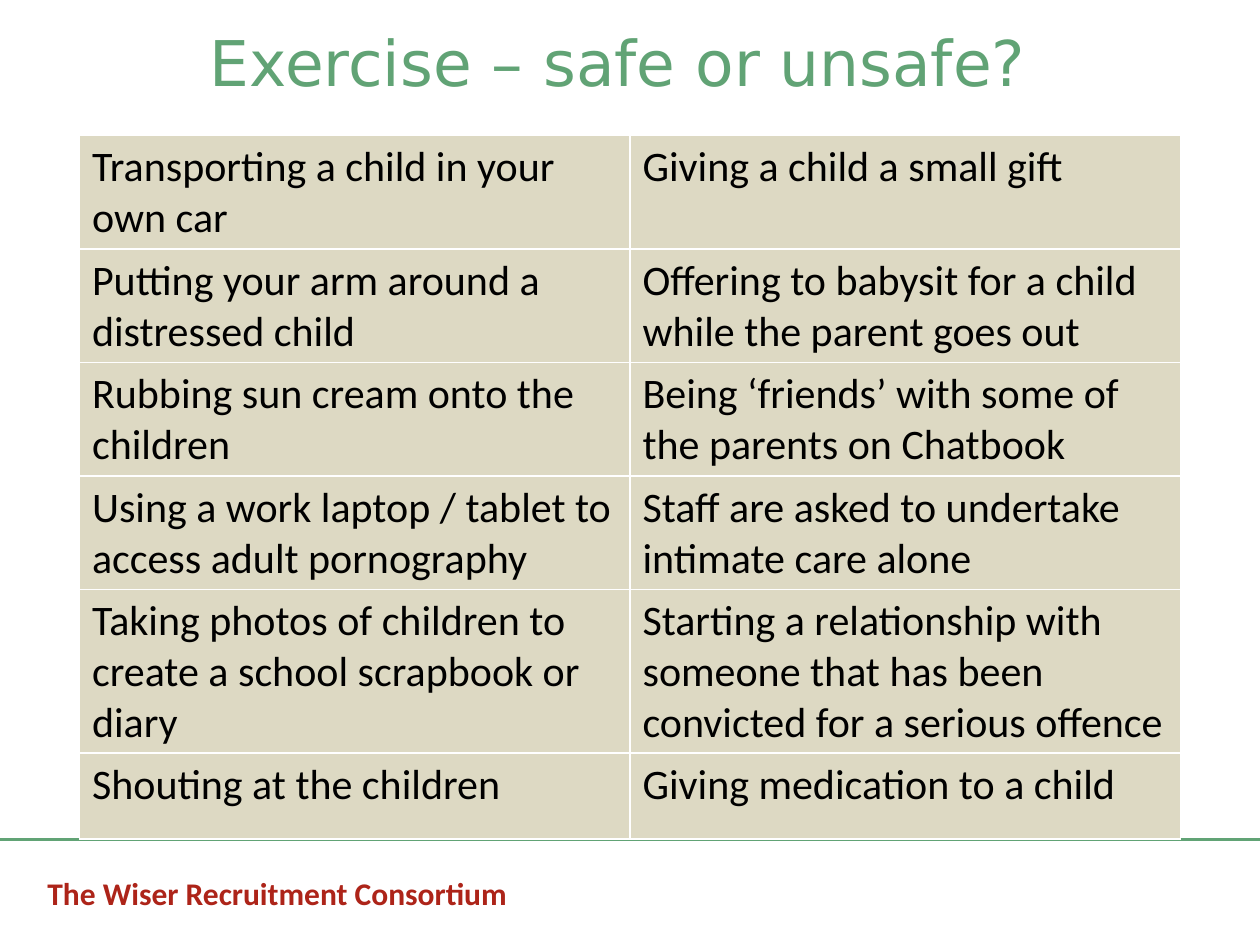
"""Build a slide with a table of safe or unsafe situations."""
from dataclasses import dataclass

from lxml.etree import SubElement
from pptx import Presentation
from pptx.dml.color import RGBColor as RGB
from pptx.enum.shapes import MSO_CONNECTOR as LINK
from pptx.enum.text import MSO_ANCHOR as ANCHOR, MSO_AUTO_SIZE as FIT, PP_ALIGN as ALIGN
from pptx.oxml import parse_xml
from pptx.oxml.ns import nsdecls, qn
from pptx.util import Pt


@dataclass(frozen=True)
class Theme:
    green: str = "61A375"
    red: str = "AD2419"
    sand: str = "DDD9C3"
    black: str = "000000"
    white: str = "FFFFFF"
    head: str = "DejaVu Sans"
    body: str = "Calibri"
    big: int = 36
    mid: int = 24
    small: int = 18


THEME = Theme()
WIDE, HIGH = 720, 540
CASES = [
    ("Transporting a child in your own car", "Giving a child a small gift"),
    ("Putting your arm around a distressed child",
     "Offering to babysit for a child while the parent goes out"),
    ("Rubbing sun cream onto the children",
     "Being ‘friends’ with some of the parents on Chatbook"),
    ("Using a work laptop / tablet to access adult pornography",
     "Staff are asked to undertake intimate care alone"),
    ("Taking photos of children to create a school scrapbook or diary",
     "Starting a relationship with someone that has been convicted for a serious offence"),
    ("Shouting at the children", "Giving medication to a child"),
]
ROWS = [62, 62, 62, 62, 90, 49]


def style(para, name, size, color, bold=False):
    """Set the font of a whole paragraph."""
    font = para.font
    font.name, font.size, font.bold = name, Pt(size), bold
    font.color.rgb = RGB.from_string(color)


def place(shape, left, top, width, height):
    """Move and size a shape, in points."""
    shape.left, shape.top = Pt(left), Pt(top)
    shape.width, shape.height = Pt(width), Pt(height)


def add_title(slide, text):
    """Fill the title placeholder."""
    title = slide.shapes.title
    place(title, 120, 13.7, 480, 44)
    frame = title.text_frame
    frame.text = text
    frame.margin_left = frame.margin_right = frame.margin_top = frame.margin_bottom = 0
    frame.vertical_anchor, frame.auto_size = ANCHOR.TOP, FIT.SHAPE_TO_FIT_TEXT
    para = frame.paragraphs[0]
    para.alignment = ALIGN.LEFT
    style(para, THEME.head, THEME.big, THEME.green)


def add_foot(slide, text):
    """Add the footer with the rule above it."""
    rule = slide.shapes.add_connector(LINK.STRAIGHT, 0, Pt(479.5), Pt(WIDE), Pt(479.5))
    rule.line.color.rgb = RGB.from_string(THEME.green)
    rule.line.width = Pt(1.75)
    SubElement(rule._element.spPr, qn("a:effectLst"))
    frame = slide.shapes.add_textbox(Pt(20), Pt(496), Pt(607), Pt(29)).text_frame
    frame.word_wrap, frame.auto_size = True, FIT.SHAPE_TO_FIT_TEXT
    frame.text = text
    style(frame.paragraphs[0], THEME.body, THEME.small, THEME.red, True)


def edge(cell):
    """Draw a thin white border on each side of a cell."""
    props = cell._tc.get_or_add_tcPr()
    for spot, side in enumerate("LRTB"):
        props.insert(spot, parse_xml(
            f'<a:ln{side} {nsdecls("a")} w="{Pt(1)}"><a:solidFill>'
            f'<a:srgbClr val="{THEME.white}"/></a:solidFill></a:ln{side}>'))


def add_grid(slide, cases):
    """Add the table of cases."""
    grid = slide.shapes.add_table(
        len(cases), 2, Pt(45.4), Pt(77.4), Pt(629.2), Pt(sum(ROWS))).table
    grid.first_row = grid.horz_banding = False
    for row, high, texts in zip(grid.rows, ROWS, cases):
        row.height = Pt(high)
        for cell, text in zip(row.cells, texts):
            cell.text = text
            cell.fill.solid()
            cell.fill.fore_color.rgb = RGB.from_string(THEME.sand)
            style(cell.text_frame.paragraphs[0], THEME.body, THEME.mid, THEME.black)
            edge(cell)


def main():
    """Build and save the slide."""
    deck = Presentation()
    deck.slide_width, deck.slide_height = Pt(WIDE), Pt(HIGH)
    slide = deck.slides.add_slide(deck.slide_layouts[5])
    add_foot(slide, "The Wiser Recruitment Consortium")
    add_title(slide, "Exercise – safe or unsafe?")
    add_grid(slide, CASES)
    deck.save("out.pptx")


if __name__ == "__main__":
    main()
